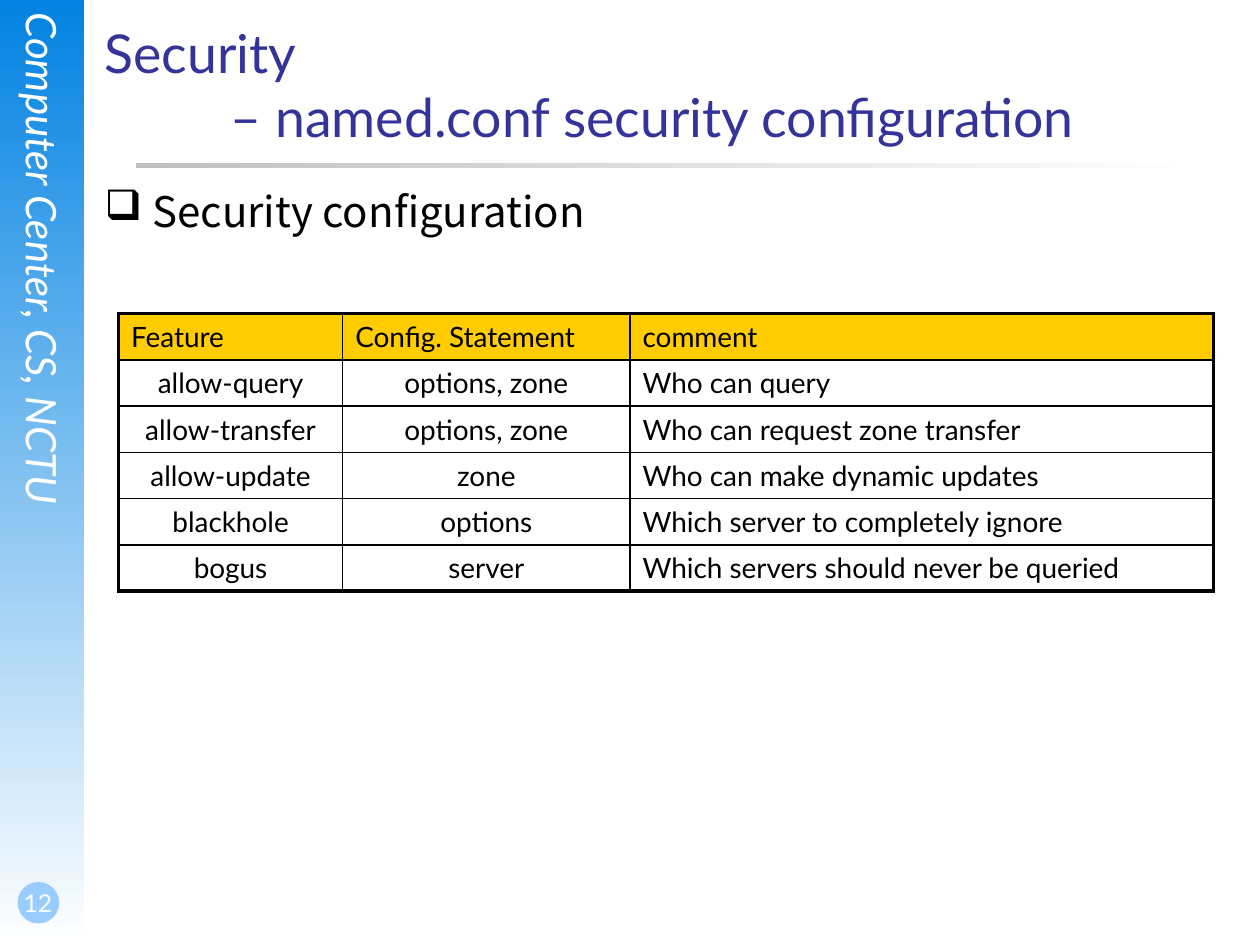
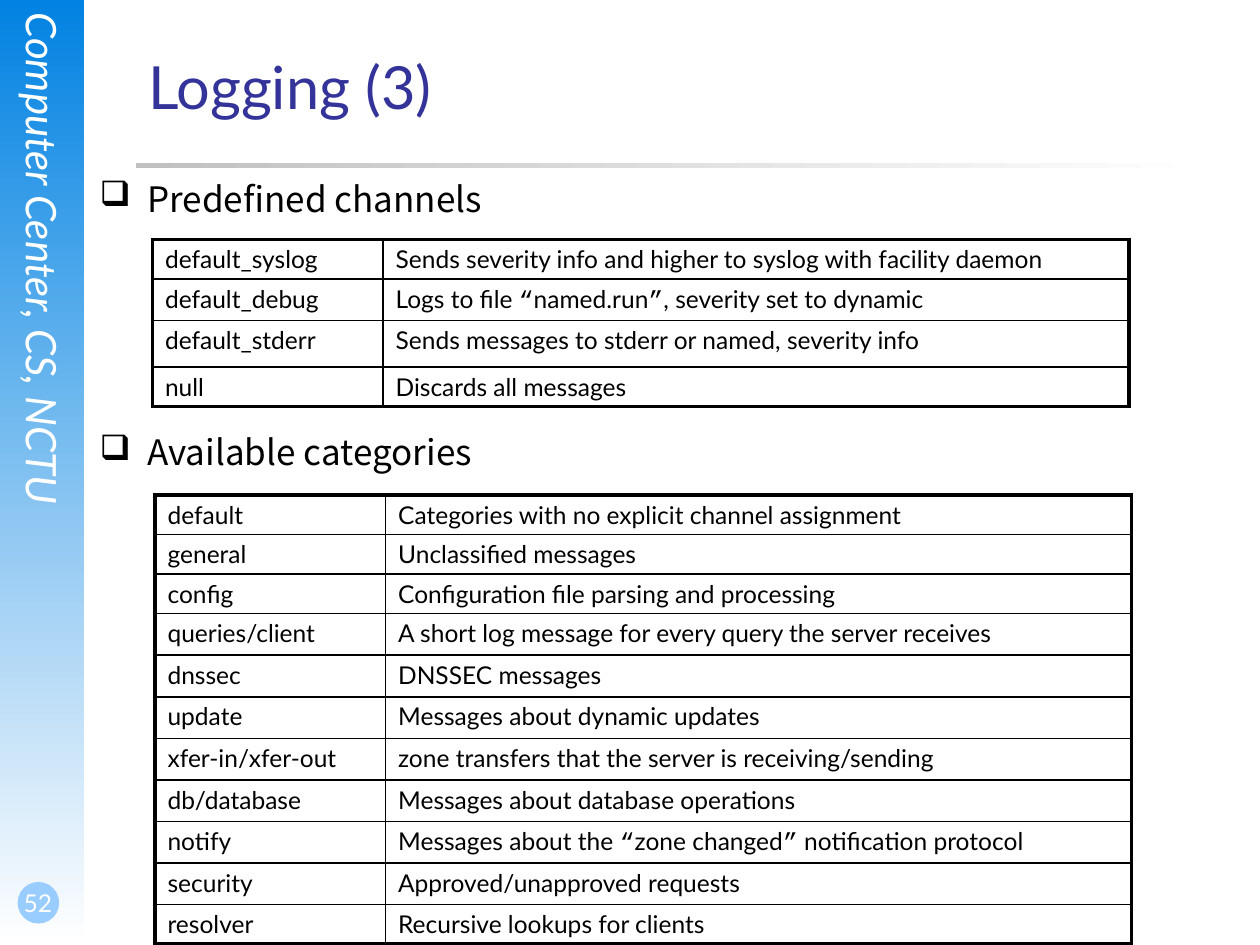
from itertools import groupby

from lxml.etree import SubElement
from pptx import Presentation
from pptx.dml.color import RGBColor
from pptx.enum.shapes import MSO_SHAPE as Preset
from pptx.enum.text import MSO_ANCHOR as Anchor, PP_ALIGN as Align
from pptx.oxml.ns import qn
from pptx.util import Inches, Pt

BLACK = RGBColor(0x00, 0x00, 0x00)
WHITE = RGBColor(0xFF, 0xFF, 0xFF)
BAND_BLUE = RGBColor(0x02, 0x82, 0xE2)
PAGE_BLUE = RGBColor(0x99, 0xCC, 0xFF)
RULE_GREY = RGBColor(0xC0, 0xC0, 0xC0)
TITLE_BLUE = RGBColor(0x33, 0x33, 0x99)
HEADER_GOLD = RGBColor(0xFF, 0xCC, 0x00)

MAIN_FONT = "Lato"
BODY_FONT = "Noto Sans CJK SC"
QUOTE_FONT = "Courier New"
THICK, THIN = 2.25, 1


def write(paragraph, text, size=14, font=MAIN_FONT, color=BLACK, italic=False,
          align=None, before=None, indent=0, bullet=None):
    """Fill a paragraph, with curly quotes in their own font."""
    for is_quote, letters in groupby(text, key=lambda letter: letter in "“”"):
        run = paragraph.add_run()
        run.text = "".join(letters)
        run.font.name = QUOTE_FONT if is_quote else font
        run.font.size = Pt(size)
        run.font.italic = italic
        run.font.color.rgb = color
    if align is not None:
        paragraph.alignment = align
    props = paragraph._p.get_or_add_pPr()
    if indent:
        props.set("marL", str(Inches(indent)))
    if before:
        spacing = SubElement(props, qn("a:spcBef"))
        SubElement(spacing, qn("a:spcPct"), val=str(before * 1000))
    if bullet:
        props.set("indent", str(-Inches(indent)))
        SubElement(props, qn("a:buChar"), char=bullet)


class Deck:
    def __init__(self):
        self.prs = Presentation()
        self.prs.slide_width, self.prs.slide_height = Inches(10), Inches(7.5)
        self.slide = None

    def new_slide(self, number):
        """Start a slide with the side band, page number and title rule."""
        self.slide = self.prs.slides.add_slide(self.prs.slide_layouts[6])
        self.shape(0, 0, 0.67, 7.5, gradient=(BAND_BLUE, WHITE), angle=270)
        side = self.text_frame(0.14, 0.1, 0.4, 5.11)
        side._txBody.bodyPr.set("vert", "eaVert")
        write(side.paragraphs[0], "Computer Center, CS, NCTU", size=24,
              color=WHITE, italic=True)
        self.shape(0.14, 7, 0.33, 0.33, Preset.OVAL, color=PAGE_BLUE)
        page = self.text_frame(0, 6.83, 0.58, 0.5, Anchor.BOTTOM, (0.02, 0, 0, 0.05))
        write(page.paragraphs[0], str(number), color=WHITE, align=Align.CENTER)
        self.shape(1.08, 1.29, 8.5, 0.04, gradient=(RULE_GREY, WHITE))

    def shape(self, left, top, width, height, preset=Preset.RECTANGLE,
              color=None, gradient=None, angle=0):
        shape = self.slide.shapes.add_shape(
            preset, Inches(left), Inches(top), Inches(width), Inches(height))
        shape.shadow.inherit = False
        shape.line.fill.background()
        if gradient:
            shape.fill.gradient()
            shape.fill.gradient_angle = angle
            for stop, stop_color in zip(shape.fill.gradient_stops, gradient):
                stop.color.rgb = stop_color
        else:
            shape.fill.solid()
            shape.fill.fore_color.rgb = color

    def text_frame(self, left, top, width, height, anchor=Anchor.TOP,
                   insets=(0, 0, 0, 0)):
        frame = self.slide.shapes.add_textbox(
            Inches(left), Inches(top), Inches(width), Inches(height)).text_frame
        frame.word_wrap = True
        frame.vertical_anchor = anchor
        (frame.margin_left, frame.margin_top,
         frame.margin_right, frame.margin_bottom) = map(Inches, insets)
        return frame

    def title(self, left, top, width, size, heading, subheading=None, inset=0):
        frame = self.text_frame(left, top, width, 1.1, Anchor.MIDDLE,
                                (inset, inset / 2, inset, inset / 2))
        write(frame.paragraphs[0], heading, size=size, color=TITLE_BLUE)
        if subheading:
            write(frame.add_paragraph(), subheading, size=size,
                  color=TITLE_BLUE, indent=1)

    def bullet(self, left, top, text, size):
        frame = self.text_frame(left, top, 8.17, 0.5)
        write(frame.paragraphs[0], text, size=size, font=BODY_FONT,
              before=25, indent=0.38, bullet="❑")

    def table(self, left, top, widths, heights, rows, size, margin=0.05,
              header=False, centered=()):
        """Draw a grid with a thick frame and thin inner lines."""
        table = self.slide.shapes.add_table(
            len(rows), len(widths), Inches(left), Inches(top),
            Inches(sum(widths)), Inches(sum(heights))).table
        table.first_row = table.horz_banding = False
        for column, width in zip(table.columns, widths):
            column.width = Inches(width)
        for row, height in zip(table.rows, heights):
            row.height = Inches(height)
        last_row, last_column = len(rows) - 1, len(widths) - 1
        for r, texts in enumerate(rows):
            for c, text in enumerate(texts):
                cell = table.cell(r, c)
                is_header = header and r == 0
                cell.margin_top = cell.margin_bottom = Inches(margin)
                self.border(cell, L=c == 0, R=c == last_column,
                            T=r == 0, B=r == last_row)
                cell.fill.solid()
                cell.fill.fore_color.rgb = HEADER_GOLD if is_header else WHITE
                align = Align.CENTER if c in centered and not is_header else Align.LEFT
                write(cell.text_frame.paragraphs[0], text, size=size,
                      align=align, before=25)

    def border(self, cell, **outer_sides):
        props = cell._tc.get_or_add_tcPr()
        for side, is_outer in outer_sides.items():
            line = SubElement(props, qn(f"a:ln{side}"),
                              w=str(Pt(THICK if is_outer else THIN)))
            paint = SubElement(line, qn("a:solidFill"))
            SubElement(paint, qn("a:srgbClr"), val=str(BLACK))


SECURITY_FEATURES = [
    ("Feature", "Config. Statement", "comment"),
    ("allow-query", "options, zone", "Who can query"),
    ("allow-transfer", "options, zone", "Who can request zone transfer"),
    ("allow-update", "zone", "Who can make dynamic updates"),
    ("blackhole", "options", "Which server to completely ignore"),
    ("bogus", "server", "Which servers should never be queried"),
]
CHANNELS = [
    ("default_syslog", "Sends severity info and higher to syslog with facility daemon"),
    ("default_debug", "Logs to file “named.run”, severity set to dynamic"),
    ("default_stderr", "Sends messages to stderr or named, severity info"),
    ("null", "Discards all messages"),
]
CATEGORIES = [
    ("default", "Categories with no explicit channel assignment"),
    ("general", "Unclassified messages"),
    ("config", "Configuration file parsing and processing"),
    ("queries/client", "A short log message for every query the server receives"),
    ("dnssec", "DNSSEC messages"),
    ("update", "Messages about dynamic updates"),
    ("xfer-in/xfer-out", "zone transfers that the server is receiving/sending"),
    ("db/database", "Messages about database operations"),
    ("notify", "Messages about the “zone changed” notification protocol"),
    ("security", "Approved/unapproved requests"),
    ("resolver", "Recursive lookups for clients"),
]


def main():
    deck = Deck()

    # Security configuration
    deck.new_slide(12)
    deck.title(0.83, 0.12, 8.8, 30.6, "Security",
               "– named.conf security configuration")
    deck.table(0.94, 2.49, (1.78, 2.28, 4.63), [0.365] * 6, SECURITY_FEATURES,
               size=16, header=True, centered=(0, 1))
    deck.bullet(0.83, 1.47, "Security configuration", 24)

    # Logging channels and categories
    deck.new_slide(52)
    deck.title(1.08, 0.13, 8.5, 34, "Logging (3)", inset=0.1)
    log_columns = (1.83, 5.92)
    deck.bullet(0.79, 1.41, "Predefined channels", 20)
    deck.table(1.21, 1.9, log_columns, [0.31, 0.33, 0.37, 0.31], CHANNELS,
               size=14, margin=0.04)
    deck.bullet(0.79, 3.42, "Available categories", 20)
    deck.table(1.23, 3.93, log_columns, [0.31] * 3 + [0.33] * 7 + [0.31],
               CATEGORIES, size=14, margin=0.04)

    deck.prs.save("out.pptx")


if __name__ == "__main__":
    main()
